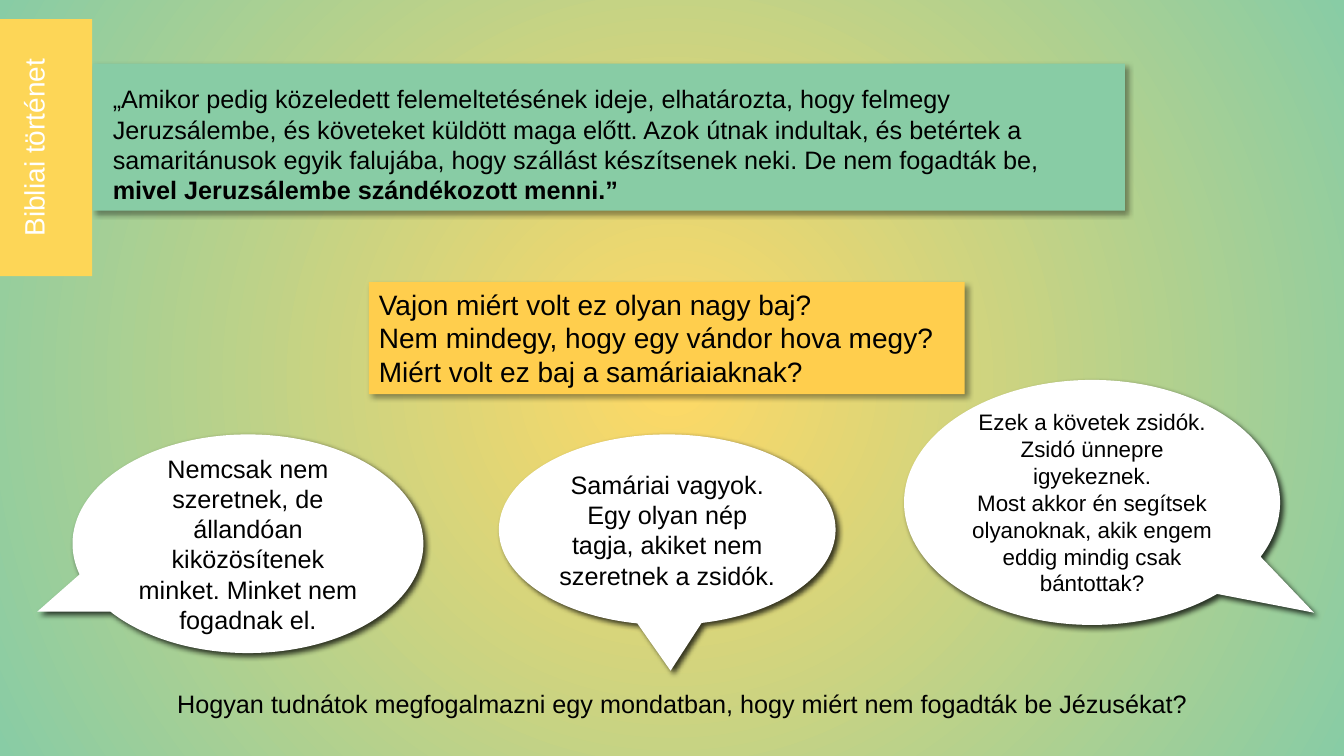
"""Builds a Bible story slide with a quotation, questions and speech bubbles."""
import pptx
import pptx.util
import pptx.dml.color
import pptx.enum.shapes
import pptx.enum.text
import pptx.oxml.ns
import lxml.etree

Pt = pptx.util.Pt
qn = pptx.oxml.ns.qn
SHAPE = pptx.enum.shapes.MSO_SHAPE
ALIGN = pptx.enum.text.PP_ALIGN
ANCHOR = pptx.enum.text.MSO_ANCHOR
AUTO_SIZE = pptx.enum.text.MSO_AUTO_SIZE

COLORS = {
    "glow": "FFD965",
    "green": "88CCA5",
    "amber": "FFCE4D",
    "tab": "FDD657",
    "white": "FFFFFF",
    "black": "000000",
}


class StorySlide:
    """Holds the style and the current slide."""

    font = "Arial"

    def __init__(self, slide):
        self.slide = slide

    def color(self, name):
        return pptx.dml.color.RGBColor.from_string(COLORS[name])

    def background(self, center, edge):
        fill = self.slide.background.fill
        fill.gradient()
        for stop, name in zip(fill.gradient_stops, (center, edge)):
            stop.color.rgb = self.color(name)
        gradient = next(self.slide.element.iter(qn("a:gradFill")))
        gradient.remove(gradient.find(qn("a:lin")))
        circle = lxml.etree.SubElement(gradient, qn("a:path"), path="circle")
        lxml.etree.SubElement(circle, qn("a:fillToRect"),
                              l="50000", t="50000", r="50000", b="50000")

    def set_text(self, shape, paragraphs, size, color="black", align=ALIGN.LEFT,
                 anchor=ANCHOR.TOP, grow=False):
        frame = shape.text_frame
        frame.word_wrap = True
        frame.vertical_anchor = anchor
        if grow:
            frame.auto_size = AUTO_SIZE.SHAPE_TO_FIT_TEXT
        frame.text = "\n".join(paragraphs)
        for paragraph in frame.paragraphs:
            paragraph.alignment = align
            paragraph.font.name = self.font
            paragraph.font.size = Pt(size)
            paragraph.font.color.rgb = self.color(color)
        return frame

    def shape(self, kind, bounds, fill, shadow_opacity=0):
        shape = self.slide.shapes.add_shape(kind, *map(Pt, bounds))
        shape.fill.solid()
        shape.fill.fore_color.rgb = self.color(fill)
        shape.line.fill.background()
        shape.shadow.inherit = False
        if shadow_opacity:
            effects = next(shape.element.iter(qn("a:effectLst")))
            shadow = lxml.etree.SubElement(
                effects, qn("a:outerShdw"), blurRad=str(Pt(4)), dist=str(Pt(3)),
                dir="2700000", algn="tl", rotWithShape="0")
            tint = lxml.etree.SubElement(shadow, qn("a:srgbClr"), val=COLORS["black"])
            lxml.etree.SubElement(tint, qn("a:alpha"), val=str(shadow_opacity * 1000))
        return shape

    def panel(self, bounds, fill, paragraphs, size):
        panel = self.shape(SHAPE.RECTANGLE, bounds, fill, 40)
        return self.set_text(panel, paragraphs, size, grow=True)

    def bubble(self, bounds, tail, paragraphs, size):
        bubble = self.shape(SHAPE.OVAL_CALLOUT, bounds, "white", 74)
        bubble.adjustments[0], bubble.adjustments[1] = tail
        self.set_text(bubble, paragraphs, size, align=ALIGN.CENTER, anchor=ANCHOR.MIDDLE)

    def side_tab(self, bounds, label):
        tab = self.shape(SHAPE.RECTANGLE, bounds, "tab")
        self.set_text(tab, [label], 20, "white", ALIGN.CENTER, ANCHOR.MIDDLE)
        next(tab.element.iter(qn("a:bodyPr"))).set("vert", "vert270")

    def caption(self, bounds, text, size):
        caption = self.slide.shapes.add_textbox(*map(Pt, bounds))
        self.set_text(caption, [text], size, grow=True)


def main():
    deck = pptx.Presentation()
    deck.slide_width, deck.slide_height = Pt(960), Pt(540)
    story = StorySlide(deck.slides.add_slide(deck.slide_layouts[6]))
    story.background("glow", "green")

    quotation = story.panel((66.2, 45.4, 737.3, 105.1), "green", [
        "„Amikor pedig közeledett felemeltetésének ideje, elhatározta, hogy felmegy "
        "Jeruzsálembe, és követeket küldött maga előtt. Azok útnak indultak, és betértek a "
        "samaritánusok egyik falujába, hogy szállást készítsenek neki. De nem fogadták be, "
    ], 18)
    quotation.margin_left = quotation.margin_top = quotation.margin_right = Pt(14.4)
    reason = quotation.paragraphs[0].add_run()
    reason.text = "mivel Jeruzsálembe szándékozott menni.”"
    reason.font.bold = True

    story.panel((263.5, 201.6, 425.5, 79.9), "amber", [
        "Vajon miért volt ez olyan nagy baj?",
        "Nem mindegy, hogy egy vándor hova megy?",
        "Miért volt ez baj a samáriaiaknak?",
    ], 20)

    bubbles = [
        ((356.4, 310.3, 240.5, 136.1), (0.01, 0.74), 18,
         ["Samáriai vagyok.", "Egy olyan nép tagja, akiket nem szeretnek a zsidók."]),
        ((645.8, 271.4, 268.6, 175), (0.59, 0.45), 16,
         ["Ezek a követek zsidók. Zsidó ünnepre igyekeznek.",
          "Most akkor én segítsek olyanoknak, akik engem eddig mindig csak bántottak?"]),
        ((51.8, 310.3, 250.6, 156.2), (-0.6, 0.31), 18,
         ["Nemcsak nem szeretnek, de állandóan kiközösítenek minket. "
          "Minket nem fogadnak el."]),
    ]
    for bounds, tail, size, paragraphs in bubbles:
        story.bubble(bounds, tail, paragraphs, size)

    story.side_tab((-18, 13.7, 83.9, 183.6), "Bibliai történet")
    story.caption((119.5, 488.2, 766.1, 28.8),
                  "Hogyan tudnátok megfogalmazni egy mondatban, "
                  "hogy miért nem fogadták be Jézusékat?", 18)
    deck.save("out.pptx")


if __name__ == "__main__":
    main()
